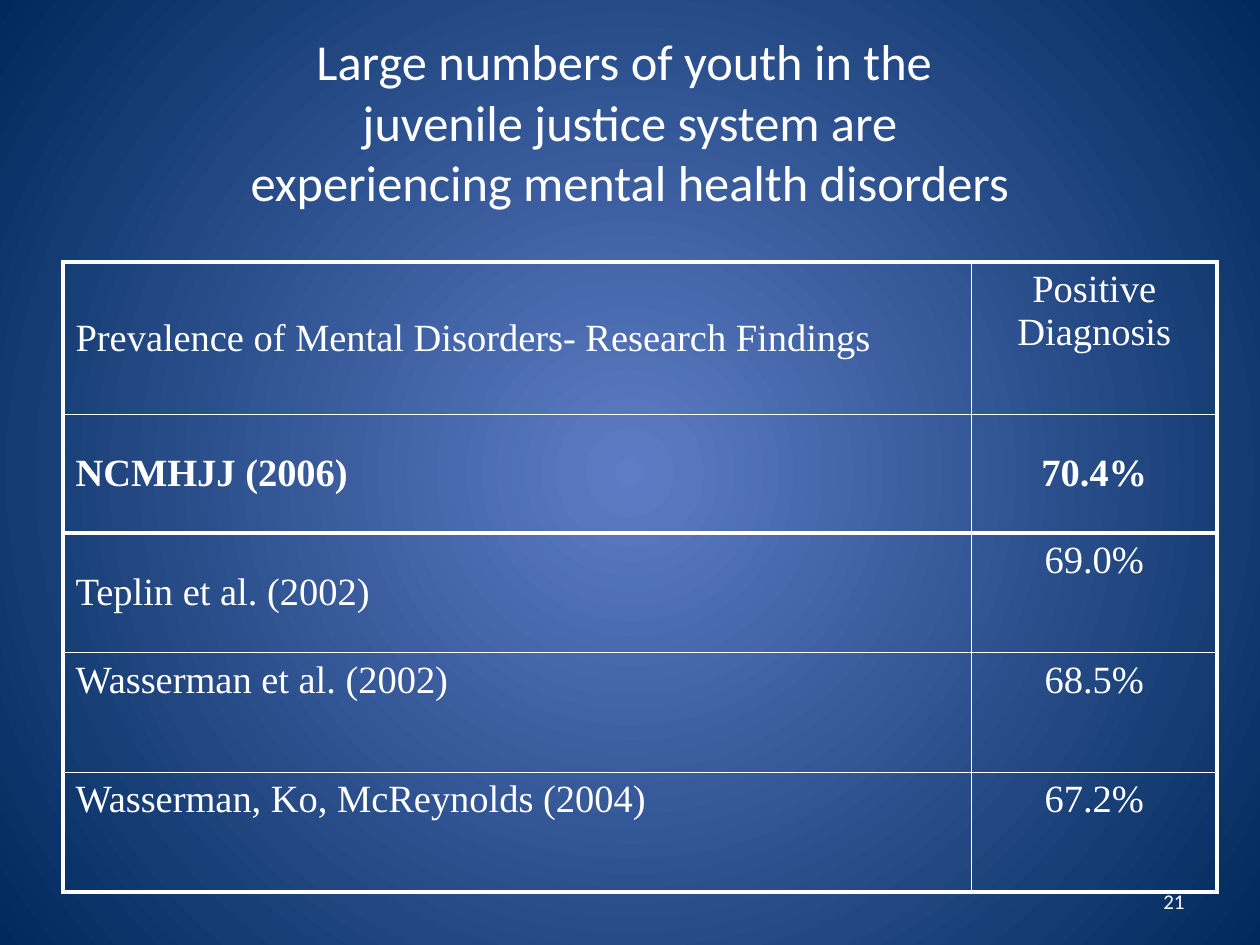
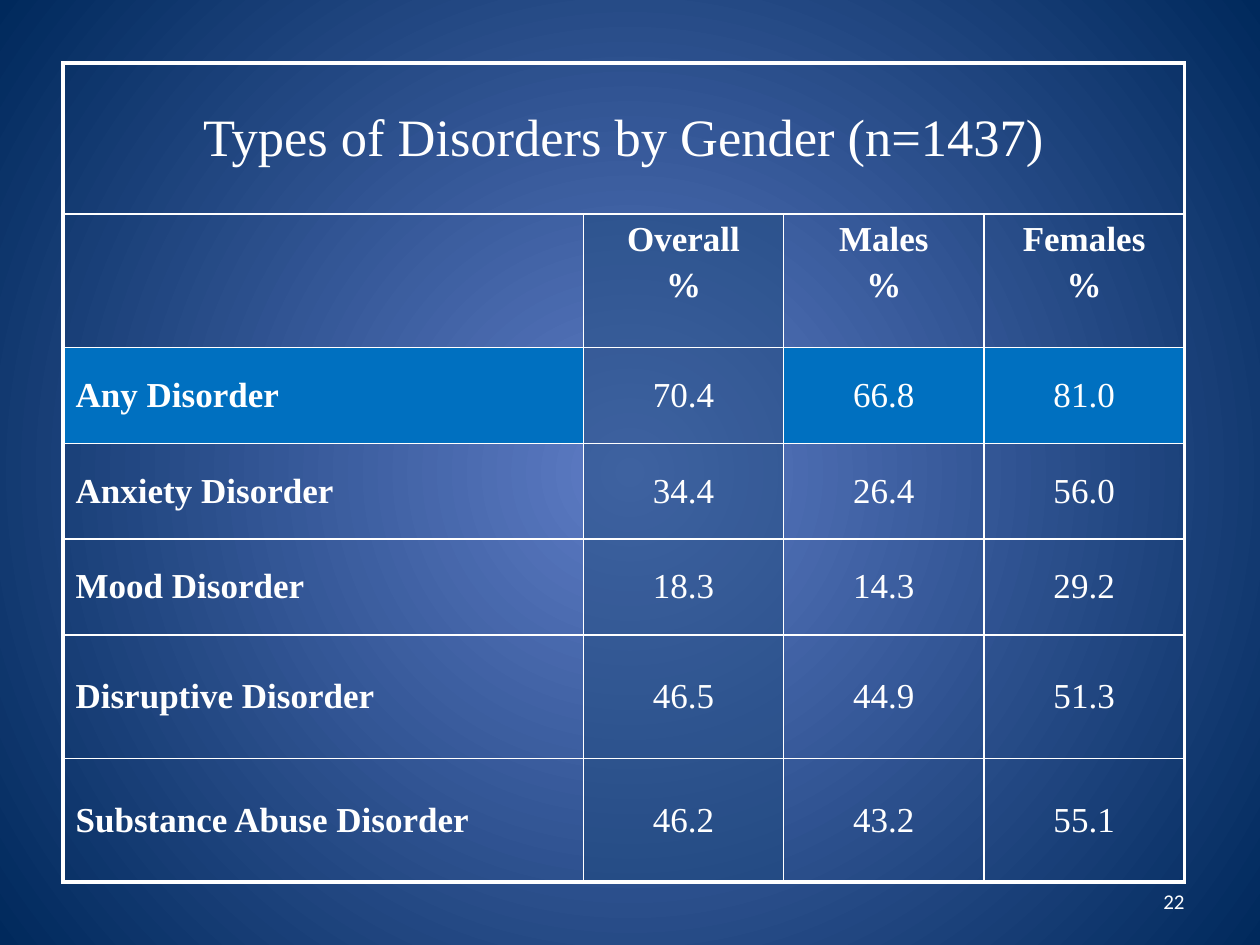
from dataclasses import dataclass

from lxml import etree
from pptx import Presentation
from pptx.dml.color import RGBColor
from pptx.enum.text import MSO_ANCHOR, MSO_AUTO_SIZE, PP_ALIGN
from pptx.oxml.ns import qn
from pptx.util import Inches, Pt

LEFT, CENTER, RIGHT = PP_ALIGN.LEFT, PP_ALIGN.CENTER, PP_ALIGN.RIGHT
TOP, MIDDLE = MSO_ANCHOR.TOP, MSO_ANCHOR.MIDDLE
NO_FIT = MSO_AUTO_SIZE.NONE

WHITE = RGBColor(0xFF, 0xFF, 0xFF)
GLOW = RGBColor(0x5E, 0x7C, 0xC5)
NAVY = RGBColor(0x00, 0x29, 0x5C)
SHADE = RGBColor(0x1F, 0x49, 0x7D)
BRIGHT = RGBColor(0x00, 0x70, 0xC0)

SANS, SERIF = "Calibri", "Times New Roman"
TITLE_ONLY, BLANK = 5, 6
THIN, FRAME, HEAVY = 1, 2.25, 3  # rule widths in points


@dataclass
class Item:
    """One table cell."""
    text: str
    size: float
    bold: bool = False
    align: PP_ALIGN = CENTER
    anchor: MSO_ANCHOR = MIDDLE
    fill: RGBColor | None = None
    alpha: int = 100
    span: int = 1


@dataclass
class Grid:
    """A table with a thick frame and, if asked, a heavy rule under one row."""
    left: float
    top: float
    cols: list[float]
    rows: list[float]
    items: list[list[Item]]
    heavy: int | None = None


def write(frame, text: str, *, size: float, font: str = SERIF, bold: bool = False,
          align: PP_ALIGN = LEFT, before: int = 0) -> None:
    """Fill a text frame, one paragraph a line; before is a percentage."""
    for n, line in enumerate(text.split("\n")):
        para = frame.paragraphs[0] if n == 0 else frame.add_paragraph()
        para.alignment = align
        if before:
            gap = etree.SubElement(para._p.get_or_add_pPr(), qn("a:spcBef"))
            etree.SubElement(gap, qn("a:spcPct"), val=str(before * 1000))
        run = para.add_run()
        run.text = line
        run.font.name, run.font.size = font, Pt(size)
        run.font.bold, run.font.color.rgb = bold, WHITE


def edge(cell, side: str, width: float) -> None:
    """Draw one solid white cell border."""
    line = etree.SubElement(cell._tc.get_or_add_tcPr(), qn(f"a:ln{side}"),
                            w=str(Pt(width)))
    solid = etree.SubElement(line, qn("a:solidFill"))
    etree.SubElement(solid, qn("a:srgbClr"), val=str(WHITE))


def paint(cell, item: Item) -> None:
    """Fill a cell, or leave it clear."""
    if item.fill is None:
        cell.fill.background()
        return
    cell.fill.solid()
    cell.fill.fore_color.rgb = item.fill
    if item.alpha < 100:
        tone = cell._tc.tcPr.find(f"{qn('a:solidFill')}/{qn('a:srgbClr')}")
        etree.SubElement(tone, qn("a:alpha"), val=str(item.alpha * 1000))


def draw_grid(slide, grid: Grid) -> None:
    high, wide = len(grid.rows), len(grid.cols)
    table = slide.shapes.add_table(
        high, wide, Inches(grid.left), Inches(grid.top),
        Inches(sum(grid.cols)), Inches(sum(grid.rows))).table
    table.first_row = table.horz_banding = False
    for col, width in zip(table.columns, grid.cols):
        col.width = Inches(width)
    for row, height in zip(table.rows, grid.rows):
        row.height = Inches(height)

    for r, items in enumerate(grid.items):
        for c, item in enumerate(items):
            cell = table.cell(r, c)
            if item.span > 1:
                cell.merge(table.cell(r, c + item.span - 1))
            cell.vertical_anchor = item.anchor
            edge(cell, "L", FRAME if c == 0 else THIN)
            edge(cell, "R", FRAME if c + item.span == wide else THIN)
            for side, line in (("T", r), ("B", r + 1)):
                width = FRAME if line in (0, high) else THIN
                edge(cell, side, HEAVY if line == grid.heavy else width)
            paint(cell, item)
            if item.text:
                write(cell.text_frame, item.text, size=item.size, bold=item.bold,
                      align=item.align, before=20)


def set_back(master) -> None:
    """Give every slide the round blue glow."""
    fill = master.background.fill
    fill.gradient()
    for stop, color in zip(fill.gradient_stops, (GLOW, NAVY)):
        stop.color.rgb = color
    grad = master.element.find(f".//{qn('p:bg')}//{qn('a:gradFill')}")
    grad.remove(grad.find(qn("a:lin")))
    ring = etree.SubElement(grad, qn("a:path"), path="circle")
    etree.SubElement(ring, qn("a:fillToRect"), dict.fromkeys("ltrb", "50000"))


def add_slide(deck, layout: int, number: int):
    """Add a slide with its page number."""
    slide = deck.slides.add_slide(deck.slide_layouts[layout])
    box = slide.shapes.add_textbox(Inches(7.17), Inches(6.95), Inches(2.33), Inches(0.4))
    frame = box.text_frame
    frame.word_wrap, frame.vertical_anchor = True, MIDDLE
    write(frame, str(number), size=12, font=SANS, align=RIGHT)
    return slide


def set_title(slide, text: str) -> None:
    title = slide.shapes.title
    title.left, title.top = Inches(0.5), Inches(0.42)
    title.width, title.height = Inches(9), Inches(1.08)
    frame = title.text_frame
    frame.word_wrap, frame.auto_size, frame.vertical_anchor = True, NO_FIT, MIDDLE
    write(frame, text, size=28.8, font=SANS, align=CENTER)


def study_grid() -> Grid:
    """Share of youth with a diagnosis, by study."""
    data = [  # study, its anchor, rate, its anchor, bold
        ("Prevalence of Mental Disorders- Research Findings", MIDDLE,
         "Positive Diagnosis", TOP, False),
        ("NCMHJJ (2006)", MIDDLE, "70.4%", MIDDLE, True),
        ("Teplin et al. (2002)", MIDDLE, "69.0%", TOP, False),
        ("Wasserman et al. (2002)", TOP, "68.5%", TOP, False),
        ("Wasserman, Ko, McReynolds (2004)", TOP, "67.2%", TOP, False),
    ]
    items = [[Item(study, 22, bold, LEFT, near), Item(rate, 22, bold, CENTER, far)]
             for study, near, rate, far, bold in data]
    return Grid(0.5, 2.08, [7.21, 1.95], [1.21, 0.94] + [0.95] * 3, items, heavy=2)


def gender_grid() -> Grid:
    """Rates by disorder and gender, with the overall column shaded."""
    data = [
        ("Any Disorder", "70.4", "66.8", "81.0"),
        ("Anxiety Disorder", "34.4", "26.4", "56.0"),
        ("Mood Disorder", "18.3", "14.3", "29.2"),
        ("Disruptive Disorder", "46.5", "44.9", "51.3"),
        ("Substance Abuse Disorder", "46.2", "43.2", "55.1"),
    ]
    heads = [Item(f"{name}\n%", 20, True, anchor=TOP)
             for name in ("Overall", "Males", "Females")]
    items = [[Item("Types of Disorders by Gender (n=1437)", 30, span=4)],
             [Item("", 20), *heads]]
    for n, (name, *rates) in enumerate(data):
        fill = BRIGHT if n == 0 else None
        items.append([Item(name, 20, True, LEFT, fill=fill)]
                     + [Item(rate, 20, fill=fill) for rate in rates])
    for row in items[1:]:
        row[1].fill, row[1].alpha = SHADE, 50
    return Grid(0.5, 0.5, [4.13] + [1.59] * 3,
                [1.2, 1.06] + [0.76] * 3 + [0.98] * 2, items)


def main() -> None:
    deck = Presentation()
    deck.slide_width, deck.slide_height = Inches(10), Inches(7.5)
    set_back(deck.slide_master)

    # Studies
    slide = add_slide(deck, TITLE_ONLY, 21)
    set_title(slide, "Large numbers of youth in the \njuvenile justice system are\n"
                     "experiencing mental health disorders")
    draw_grid(slide, study_grid())

    # Genders
    draw_grid(add_slide(deck, BLANK, 22), gender_grid())

    deck.save("out.pptx")


if __name__ == "__main__":
    main()
